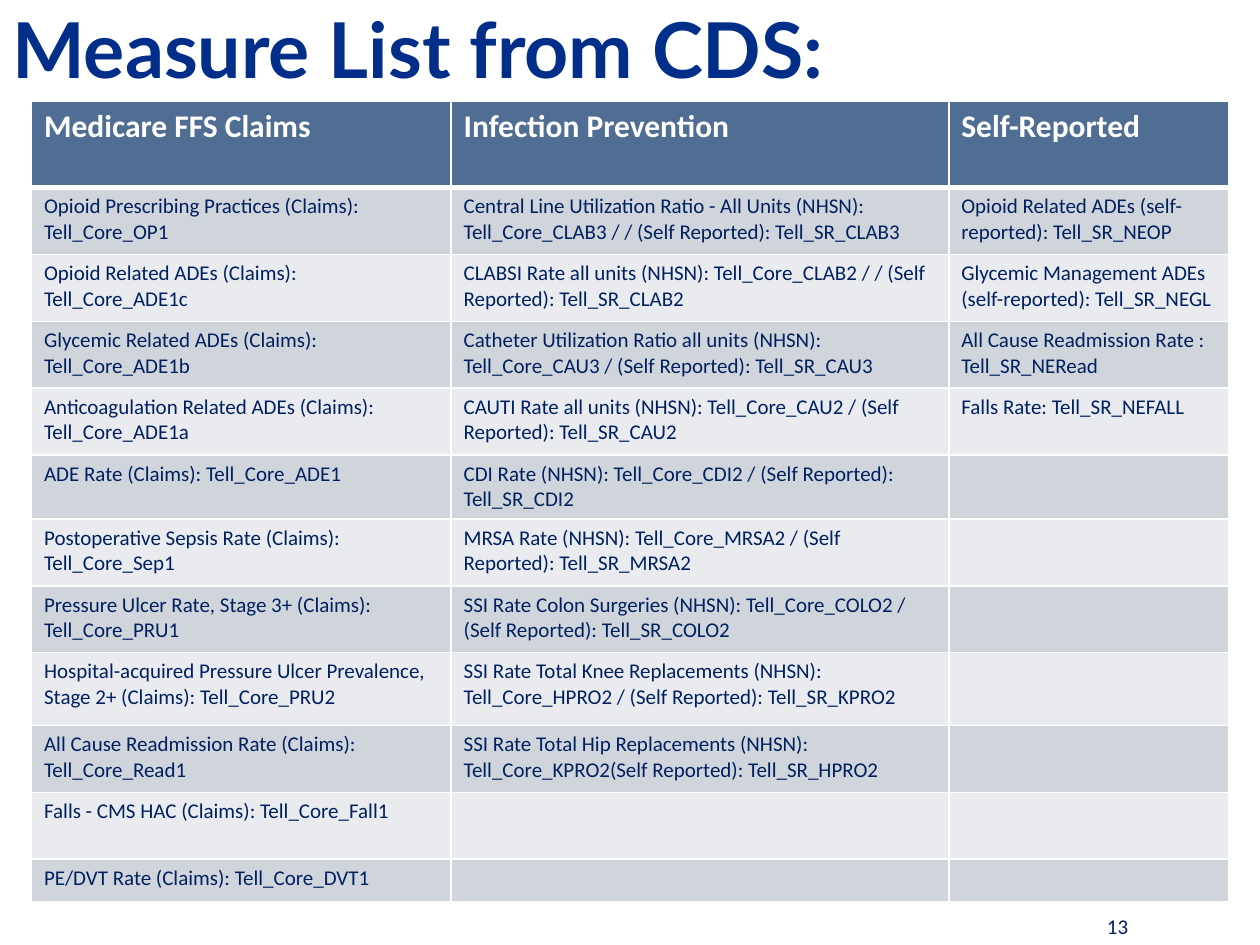
import dataclasses

import lxml.etree
import pptx
import pptx.dml.color
import pptx.enum.text
import pptx.oxml.ns
import pptx.util
from pptx.util import Inches


@dataclasses.dataclass(frozen=True)
class Theme:
    title_font: str = "Lato"
    body_font: str = "Calibri"
    title_size: int = 44
    header_size: int = 18
    body_size: int = 12
    title: str = "002E89"
    text: str = "002060"
    white: str = "FFFFFF"
    header_fill: str = "506E94"
    bands: tuple = ("D0D5DC", "E9EBEE")
    border: float = 1
    header_border: float = 3


THEME = Theme()

COLUMN_WIDTHS = [3.33, 3.95, 2.22]
ROW_HEIGHTS = [0.69] + [0.53] * 4 + [0.51] + [0.53] * 2 + [0.58] + [0.53] * 2 + [0.34]

MEASURES = {
    "Medicare FFS Claims": [
        "Opioid Prescribing Practices (Claims): Tell_Core_OP1",
        "Opioid Related ADEs (Claims): Tell_Core_ADE1c",
        "Glycemic Related ADEs (Claims): Tell_Core_ADE1b",
        "Anticoagulation Related ADEs (Claims): Tell_Core_ADE1a",
        "ADE Rate (Claims): Tell_Core_ADE1",
        "Postoperative Sepsis Rate (Claims): Tell_Core_Sep1",
        "Pressure Ulcer Rate, Stage 3+ (Claims): Tell_Core_PRU1",
        "Hospital-acquired Pressure Ulcer Prevalence, Stage 2+ (Claims): Tell_Core_PRU2",
        "All Cause Readmission Rate (Claims): Tell_Core_Read1",
        "Falls - CMS HAC (Claims): Tell_Core_Fall1",
        "PE/DVT Rate (Claims): Tell_Core_DVT1",
    ],
    "Infection Prevention": [
        "Central Line Utilization Ratio - All Units (NHSN): Tell_Core_CLAB3 / / (Self Reported): Tell_SR_CLAB3",
        "CLABSI Rate all units (NHSN): Tell_Core_CLAB2 / / (Self Reported): Tell_SR_CLAB2",
        "Catheter Utilization Ratio all units (NHSN): Tell_Core_CAU3 / (Self Reported): Tell_SR_CAU3",
        "CAUTI Rate all units (NHSN): Tell_Core_CAU2 / (Self Reported): Tell_SR_CAU2",
        "CDI Rate (NHSN): Tell_Core_CDI2 / (Self Reported): Tell_SR_CDI2",
        "MRSA Rate (NHSN): Tell_Core_MRSA2 / (Self Reported): Tell_SR_MRSA2",
        "SSI Rate Colon Surgeries (NHSN): Tell_Core_COLO2 / (Self Reported): Tell_SR_COLO2",
        "SSI Rate Total Knee Replacements (NHSN): Tell_Core_HPRO2 / (Self Reported): Tell_SR_KPRO2",
        "SSI Rate Total Hip Replacements (NHSN): Tell_Core_KPRO2(Self Reported): Tell_SR_HPRO2",
    ],
    "Self-Reported": [
        "Opioid Related ADEs (self-reported): Tell_SR_NEOP",
        "Glycemic Management ADEs (self-reported): Tell_SR_NEGL",
        "All Cause Readmission Rate : Tell_SR_NERead",
        "Falls Rate: Tell_SR_NEFALL",
    ],
}


def rgb(color):
    return pptx.dml.color.RGBColor.from_string(color)


def set_font(p, name, size, color, bold=False):
    p.font.name = name
    p.font.size = pptx.util.Pt(size)
    p.font.bold = bold
    p.font.color.rgb = rgb(color)


def add_text(s, box, text, name, size, color, bold=False, align=None):
    tf = s.shapes.add_textbox(*map(Inches, box)).text_frame
    tf.word_wrap = True
    tf.vertical_anchor = pptx.enum.text.MSO_ANCHOR.MIDDLE
    p = tf.paragraphs[0]
    p.text = text
    p.alignment = align
    set_font(p, name, size, color, bold)


def set_borders(cell, top, bottom):
    qn = pptx.oxml.ns.qn
    tcPr = cell._tc.get_or_add_tcPr()
    widths = {"L": THEME.border, "R": THEME.border, "T": top, "B": bottom}
    for side, width in widths.items():
        ln = lxml.etree.SubElement(tcPr, qn(f"a:ln{side}"), w=str(pptx.util.Pt(width)))
        fill = lxml.etree.SubElement(ln, qn("a:solidFill"))
        lxml.etree.SubElement(fill, qn("a:srgbClr"), val=THEME.white)


def fill_cell(cell, text, row):
    header = row == 0
    set_borders(
        cell,
        THEME.header_border if row == 1 else THEME.border,
        THEME.header_border if header else THEME.border,
    )
    cell.fill.solid()
    cell.fill.fore_color.rgb = rgb(THEME.header_fill if header else THEME.bands[(row - 1) % 2])
    size = THEME.header_size if header else THEME.body_size
    p = cell.text_frame.paragraphs[0]
    if text:
        p.text = text
        set_font(p, THEME.body_font, size, THEME.white if header else THEME.text, header)
    else:
        p._p.get_or_add_endParaRPr().set("sz", str(size * 100))


def add_measure_table(s, left, top):
    size = (sum(COLUMN_WIDTHS), sum(ROW_HEIGHTS))
    table = s.shapes.add_table(
        len(ROW_HEIGHTS), len(COLUMN_WIDTHS), *map(Inches, (left, top, *size))
    ).table
    for row, height in zip(table.rows, ROW_HEIGHTS):
        row.height = Inches(height)
    for c, (heading, measures) in enumerate(MEASURES.items()):
        table.columns[c].width = Inches(COLUMN_WIDTHS[c])
        texts = [heading, *measures]
        for r in range(len(ROW_HEIGHTS)):
            fill_cell(table.cell(r, c), texts[r] if r < len(texts) else "", r)


def main():
    prs = pptx.Presentation()
    prs.slide_width, prs.slide_height = Inches(10), Inches(7.5)
    s = prs.slides.add_slide(prs.slide_layouts[6])
    add_text(s, (0, -0.08, 9, 0.92), "Measure List from CDS:",
             THEME.title_font, THEME.title_size, THEME.title, bold=True)
    add_measure_table(s, 0.25, 0.8)
    add_text(s, (8.58, 7.2, 0.58, 0.3), "13", THEME.body_font, THEME.body_size,
             THEME.text, align=pptx.enum.text.PP_ALIGN.CENTER)
    prs.save("out.pptx")


if __name__ == "__main__":
    main()
